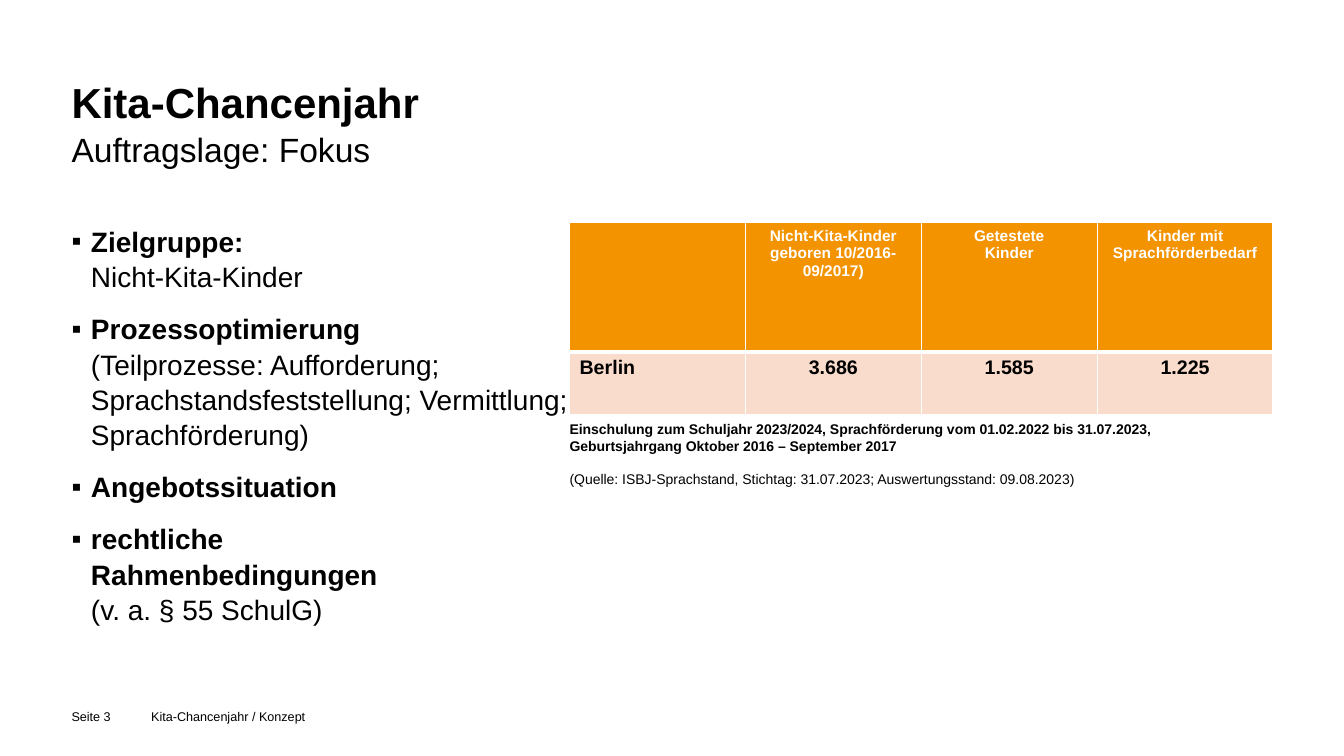
import pptx
import pptx.util
import pptx.dml.color
import pptx.enum.text
import pptx.oxml.ns
from lxml import etree

Pt = pptx.util.Pt
Align = pptx.enum.text.PP_ALIGN
Anchor = pptx.enum.text.MSO_ANCHOR
qn = pptx.oxml.ns.qn

COLORS = {"text": "000000", "white": "FFFFFF", "header": "F39300", "row": "FADCCC"}
FONT = "Arial"
LEFT, TABLE_LEFT, CONTENT_TOP, FOOTER_TOP = 51.1, 406.8, 159.1, 506.2

# Each bullet is a bold heading and, where present, a regular explanation
BULLETS = [
    ("Zielgruppe:", "Nicht-Kita-Kinder"),
    ("Prozessoptimierung", "(Teilprozesse: Aufforderung; Sprachstandsfeststellung; "
                           "Vermittlung; Sprachförderung)"),
    ("Angebotssituation", ""),
    ("rechtliche\nRahmenbedingungen", "(v. a. § 55 SchulG)"),
]
TABLE_ROWS = [
    ["", "Nicht-Kita-Kinder\ngeboren 10/2016-09/2017)", "Getestete\nKinder",
     "Kinder mit Sprachförderbedarf"],
    ["Berlin", "3.686", "1.585", "1.225"],
]
ROW_HEIGHTS = [92.2, 44.6]
COLUMN_WIDTH = 125.64


def rgb(name):
    return pptx.dml.color.RGBColor.from_string(COLORS[name])


def set_attributes(target, values):
    for name, value in values.items():
        setattr(target, name, value)


def add_text(paragraph, text, size, bold=False, color="text"):
    """Append text as runs, with a soft break at each newline."""
    for index, line in enumerate(text.split("\n")):
        if index:
            paragraph.add_line_break()
        if line:
            run = paragraph.add_run()
            run.text = line
            set_attributes(run.font, {"name": FONT, "size": Pt(size), "bold": bold})
            run.font.color.rgb = rgb(color)


def format_frame(shape, left, top, width, height):
    set_attributes(shape, {"left": Pt(left), "top": Pt(top),
                           "width": Pt(width), "height": Pt(height)})
    set_attributes(shape.text_frame, {
        "margin_left": 0, "margin_top": 0, "margin_right": 0, "margin_bottom": 0,
        "word_wrap": True, "vertical_anchor": Anchor.TOP,
        "auto_size": pptx.enum.text.MSO_AUTO_SIZE.NONE})
    return shape.text_frame


def add_text_box(slide, *box):
    return format_frame(slide.shapes.add_textbox(0, 0, 0, 0), *box)


def add_title(slide):
    frame = format_frame(slide.shapes.title, LEFT, 52.6, 857.5, 85)
    paragraph = frame.paragraphs[0]
    set_attributes(paragraph, {"alignment": Align.LEFT, "line_spacing": 1.05})
    add_text(paragraph, "Kita-Chancenjahr\n", 30, bold=True)
    add_text(paragraph, "Auftragslage: Fokus", 24)


def add_bullet(paragraph, indent):
    properties = paragraph._p.get_or_add_pPr()
    properties.set("marL", str(Pt(indent)))
    properties.set("indent", str(-Pt(indent)))
    etree.SubElement(properties, qn("a:buFont"), typeface=FONT)
    etree.SubElement(properties, qn("a:buChar"), char="▪")


def add_bullets(slide):
    frame = add_text_box(slide, LEFT, CONTENT_TOP, TABLE_LEFT - LEFT, 306)
    for index, (heading, detail) in enumerate(BULLETS):
        paragraph = frame.add_paragraph() if index else frame.paragraphs[0]
        add_bullet(paragraph, 13.9)
        set_attributes(paragraph, {"line_spacing": 1.05, "space_after": Pt(6),
                                   "space_before": Pt(6 if index else 0)})
        add_text(paragraph, heading + ("\n" if detail else ""), 20, bold=True)
        add_text(paragraph, detail, 20)


def set_borders(cell, widths):
    properties = cell._tc.get_or_add_tcPr()
    for position, (side, width) in enumerate(widths.items()):
        line = etree.Element(qn("a:" + side), w=str(Pt(width)))
        fill = etree.SubElement(line, qn("a:solidFill"))
        etree.SubElement(fill, qn("a:srgbClr"), val=COLORS["white"])
        properties.insert(position, line)


def add_results_table(slide):
    columns = len(TABLE_ROWS[0])
    table = slide.shapes.add_table(
        len(TABLE_ROWS), columns, Pt(TABLE_LEFT), Pt(CONTENT_TOP),
        Pt(COLUMN_WIDTH * columns), Pt(sum(ROW_HEIGHTS))).table
    for column in table.columns:
        column.width = Pt(COLUMN_WIDTH)
    for row_index, row in enumerate(TABLE_ROWS):
        table.rows[row_index].height = Pt(ROW_HEIGHTS[row_index])
        is_header = row_index == 0
        for column_index, text in enumerate(row):
            cell = table.cell(row_index, column_index)
            cell.fill.solid()
            cell.fill.fore_color.rgb = rgb("header" if is_header else "row")
            set_borders(cell, {"lnL": 1, "lnR": 1, "lnT": 1 if is_header else 3,
                               "lnB": 3 if is_header else 1})
            paragraph = cell.text_frame.paragraphs[0]
            paragraph.alignment = Align.CENTER if column_index else Align.LEFT
            add_text(paragraph, text, 11 if is_header else 14, bold=True,
                     color="white" if is_header else "text")


def add_table_note(slide):
    frame = add_text_box(slide, TABLE_LEFT, 300.2, 514.8, 52.6)
    add_text(frame.paragraphs[0],
             "Einschulung zum Schuljahr 2023/2024, Sprachförderung vom 01.02.2022 bis "
             "31.07.2023,\nGeburtsjahrgang Oktober 2016 – September 2017", 10, bold=True)
    source = frame.add_paragraph()
    source.space_before = Pt(12)
    add_text(source, "(Quelle: ISBJ-Sprachstand, Stichtag: 31.07.2023; "
                     "Auswertungsstand: 09.08.2023)", 10)


def add_footer(slide, text, left, width):
    frame = add_text_box(slide, left, FOOTER_TOP, width, 15)
    add_text(frame.paragraphs[0], text, 9)


def main():
    presentation = pptx.Presentation()
    set_attributes(presentation, {"slide_width": Pt(960), "slide_height": Pt(540)})
    slide = presentation.slides.add_slide(presentation.slide_layouts[5])

    # Heading and key points
    add_title(slide)
    add_bullets(slide)

    # Figures with their note
    add_results_table(slide)
    add_table_note(slide)

    # Footer
    add_footer(slide, "Seite 3", LEFT, 50.4)
    add_footer(slide, "Kita-Chancenjahr / Konzept", 108, 679)

    presentation.save("out.pptx")


if __name__ == "__main__":
    main()
